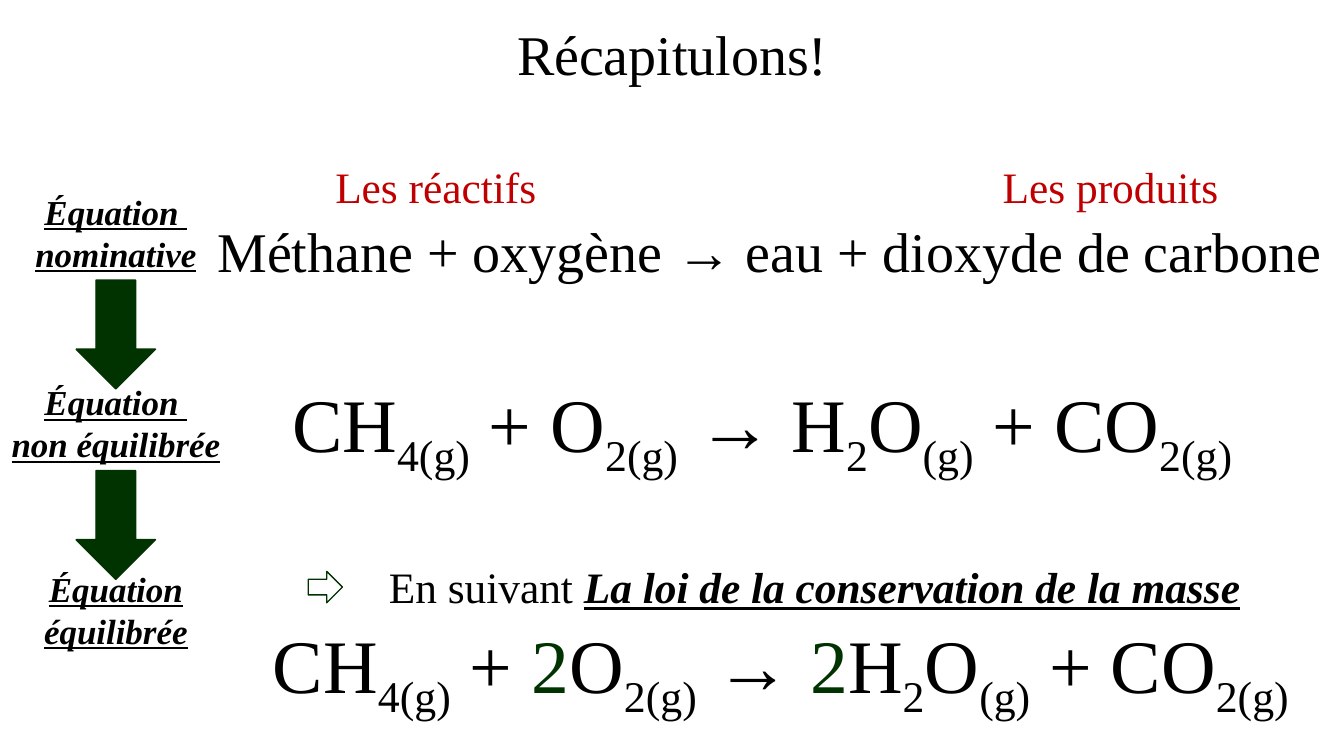
from dataclasses import dataclass

from pptx import Presentation
from pptx.dml.color import RGBColor
from pptx.enum.shapes import MSO_SHAPE
from pptx.enum.text import MSO_ANCHOR, MSO_AUTO_SIZE, PP_ALIGN
from pptx.util import Cm, Pt


@dataclass(frozen=True)
class Theme:
    font: str = "Times New Roman"
    black: str = "000000"
    green: str = "003300"
    red: str = "C00000"
    white: str = "FFFFFF"
    title: int = 40
    formula: int = 54
    heading: int = 31
    label: int = 25


THEME = Theme()
EMPHASIS = {"bold": True, "italic": True, "underline": True}
SUBSCRIPT = {"subscript": True}
COEFFICIENT = {"color": THEME.green}


def add_run(paragraph, text, size, color=THEME.black, bold=False, italic=False,
            underline=False, subscript=False):
    run = paragraph.add_run()
    run.text = text
    font = run.font
    font.name, font.size = THEME.font, Pt(size)
    font.bold, font.italic, font.underline = bold, italic, underline
    font.color.rgb = RGBColor.from_string(color)
    if subscript:
        run._r.get_or_add_rPr().set("baseline", "-25000")


class SlideBuilder:
    def __init__(self, presentation):
        self.slide = presentation.slides.add_slide(presentation.slide_layouts[5])

    def title(self, text, left, top, width, height):
        shape = self.slide.shapes.title
        shape.left, shape.top, shape.width, shape.height = map(Cm, (left, top, width, height))
        frame = shape.text_frame
        frame.vertical_anchor = MSO_ANCHOR.MIDDLE
        paragraph = frame.paragraphs[0]
        paragraph.alignment = PP_ALIGN.CENTER
        paragraph.line_spacing = 0.9
        add_run(paragraph, text, THEME.title)

    def text(self, lines, left, top, width, height, size, align=PP_ALIGN.LEFT):
        """Each line is a list of (text, format) pairs."""
        box = self.slide.shapes.add_textbox(*map(Cm, (left, top, width, height)))
        frame = box.text_frame
        frame.word_wrap = False
        frame.auto_size = MSO_AUTO_SIZE.SHAPE_TO_FIT_TEXT
        for index, line in enumerate(lines):
            paragraph = frame.add_paragraph() if index else frame.paragraphs[0]
            paragraph.alignment = align
            for text, style in line:
                add_run(paragraph, text, **{"size": size, **style})

    def label(self, lines, center, top, width):
        self.text([[(line, EMPHASIS)] for line in lines], center - width / 2, top,
                  width, 2.39, THEME.label, PP_ALIGN.CENTER)

    def arrow(self, preset, left, top, width, height, fill):
        shape = self.slide.shapes.add_shape(preset, *map(Cm, (left, top, width, height)))
        shape.shadow.inherit = False
        shape.fill.solid()
        shape.fill.fore_color.rgb = RGBColor.from_string(fill)
        shape.line.color.rgb = RGBColor.from_string(THEME.green)
        shape.line.width = Pt(1)


def equation(oxygen_coefficient="", water_coefficient=""):
    runs = [
        ("CH", {}), ("4(g)", SUBSCRIPT), (" + ", {}),
        (oxygen_coefficient, COEFFICIENT), ("O", {}), ("2(g)", SUBSCRIPT), (" → ", {}),
        (water_coefficient, COEFFICIENT), ("H", {}), ("2", SUBSCRIPT), ("O", {}),
        ("(g)", SUBSCRIPT), (" + CO", {}), ("2(g)", SUBSCRIPT),
    ]
    return [run for run in runs if run[0]]


def main():
    presentation = Presentation()
    presentation.slide_width, presentation.slide_height = Cm(33.87), Cm(19.05)
    builder = SlideBuilder(presentation)
    builder.title("Récapitulons!", 2.34, 0.3, 29.21, 2.31)

    # Steps on the left, joined by arrows
    center = 2.92
    builder.label(["Équation ", "nominative"], center, 4.67, 4.62)
    builder.label(["Équation ", "non équilibrée"], center, 9.47, 5.84)
    builder.label(["Équation", "équilibrée"], center, 14.17, 4.32)
    for top in (7.06, 11.86):
        builder.arrow(MSO_SHAPE.DOWN_ARROW, center - 1, top, 2, 2.74, THEME.green)

    # Word equation with its headings
    for heading, left, width in (("Les réactifs", 8.2, 5.64), ("Les produits", 25.02, 6.02)):
        builder.text([[(heading, {"color": THEME.red})]], left, 3.91, width, 1.57, THEME.heading)
    builder.text([[("Méthane + oxygène → eau + dioxyde de carbone", {})]],
                 5.23, 5.33, 28.63, 1.96, THEME.title)

    # Unbalanced and balanced equations
    builder.text([equation()], 7.11, 9.37, 25.55, 2.57, THEME.formula)
    builder.text([equation("2", "2")], 6.63, 15.44, 27.48, 2.57, THEME.formula)

    # Conservation law
    builder.arrow(MSO_SHAPE.RIGHT_ARROW, 7.77, 14.4, 0.86, 0.79, THEME.white)
    builder.text([[("En suivant ", {}), ("La loi de la conservation de la masse", EMPHASIS)]],
                 9.55, 14, 22.2, 1.57, THEME.heading)

    presentation.save("out.pptx")


if __name__ == "__main__":
    main()
